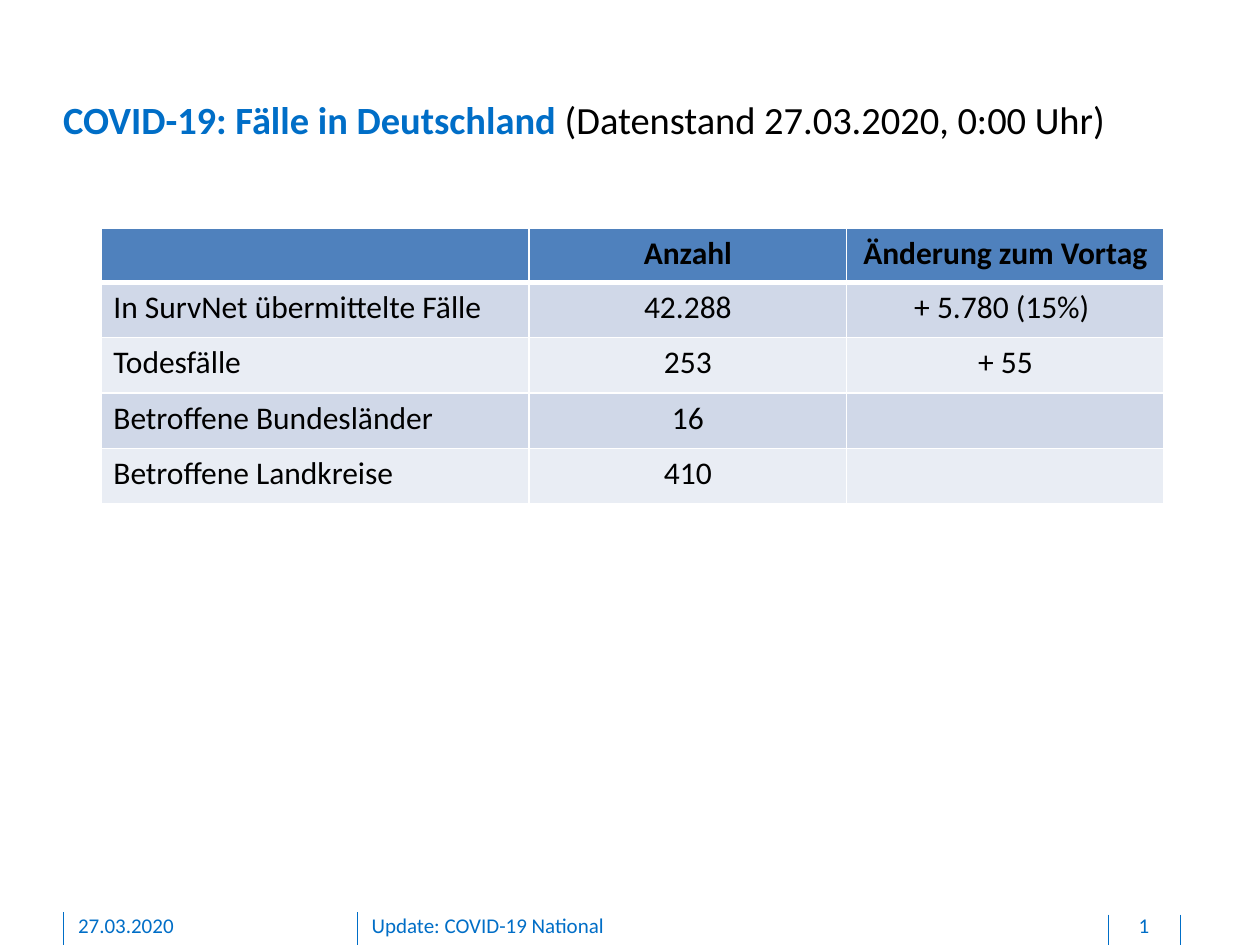
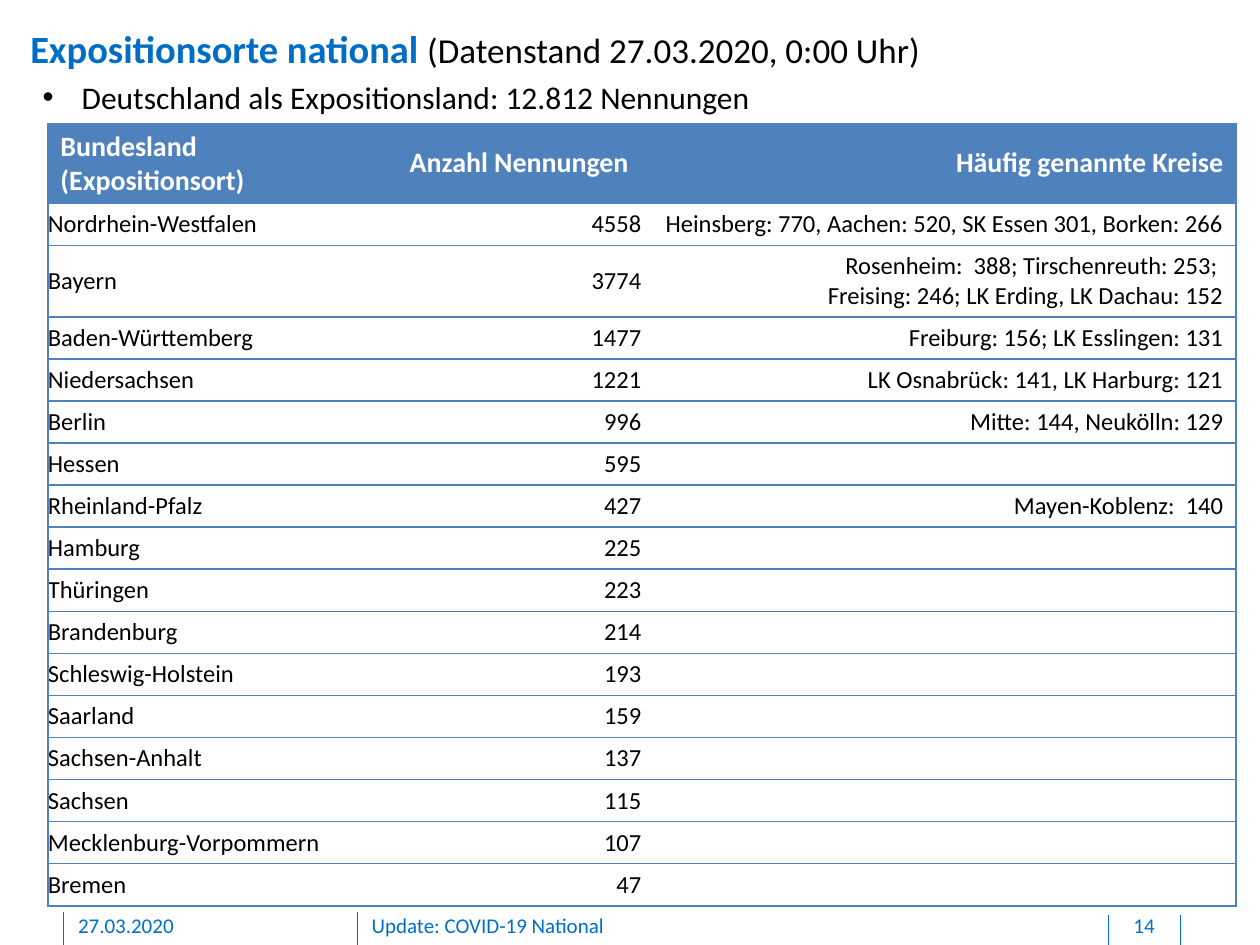
from pptx import Presentation
from pptx.dml.color import RGBColor
from pptx.enum.shapes import MSO_CONNECTOR as Link
from pptx.enum.text import MSO_ANCHOR as Anchor, PP_ALIGN as Align
from pptx.oxml.ns import qn
from pptx.util import Inches, Pt
from lxml.etree import SubElement as sub

FONT = "Calibri"
BLUE, HEAD, BLACK, WHITE = "006EC7", "4F81BD", "000000", "FFFFFF"
BANDS = ["D0D8E8", "E9EDF4"]
PLAIN = "{2D5ABB26-0587-4C30-8999-92F81FD0307C}"
DATE = "(Datenstand 27.03.2020, 0:00 Uhr)"
LEFT, MID, RIGHT = Align.LEFT, Align.CENTER, Align.RIGHT

CASES = [
    ["", "Anzahl", "Änderung zum Vortag"],
    ["In SurvNet übermittelte Fälle", "42.288", "+ 5.780 (15%) "],
    ["Todesfälle", "253", "+ 55"],
    ["Betroffene Bundesländer", "16", ""],
    ["Betroffene Landkreise", "410", ""],
]
PLACES = [
    ["Bundesland (Expositionsort)", "Anzahl Nennungen", "Häufig genannte Kreise"],
    ["Nordrhein-Westfalen", "4558",
     "Heinsberg: 770, Aachen: 520, SK Essen 301, Borken: 266"],
    ["Bayern", "3774",
     "Rosenheim:  388; Tirschenreuth: 253; \nFreising: 246; LK Erding, LK Dachau: 152"],
    ["Baden-Württemberg", "1477", "Freiburg: 156; LK Esslingen: 131"],
    ["Niedersachsen", "1221", "LK Osnabrück: 141, LK Harburg: 121"],
    ["Berlin", "996", "Mitte: 144, Neukölln: 129"],
    ["Hessen", "595", ""],
    ["Rheinland-Pfalz", "427", "Mayen-Koblenz:  140"],
    ["Hamburg", "225", ""],
    ["Thüringen", "223", ""],
    ["Brandenburg", "214", ""],
    ["Schleswig-Holstein", "193", ""],
    ["Saarland", "159", ""],
    ["Sachsen-Anhalt", "137", ""],
    ["Sachsen", "115", ""],
    ["Mecklenburg-Vorpommern", "107", ""],
    ["Bremen", "47", ""],
]


def color(code):
    return RGBColor.from_string(code)


def write(para, text, size, code, bold=False):
    run = para.add_run()
    run.text = text
    font = run.font
    font.name, font.size, font.bold = FONT, Pt(size), bold
    font.color.rgb = color(code)


def inset(item, left=0, top=0, right=0, bottom=0):
    item.margin_left, item.margin_top = Inches(left), Inches(top)
    item.margin_right, item.margin_bottom = Inches(right), Inches(bottom)


def place(shape, box):
    shape.left, shape.top, shape.width, shape.height = map(Inches, box)


def title(slide, box, lead, size):
    head = slide.shapes.title
    place(head, box)
    frame = head.text_frame
    inset(frame)
    frame.word_wrap = True
    frame.vertical_anchor = Anchor.MIDDLE
    para = frame.paragraphs[0]
    para.alignment = LEFT
    write(para, lead, 22, BLUE, True)
    write(para, DATE, size, BLACK)


def label(slide, box, text, align=LEFT):
    frame = slide.shapes.add_textbox(*map(Inches, box)).text_frame
    inset(frame, bottom=0.05)
    frame.word_wrap = True
    para = frame.paragraphs[0]
    para.alignment = align
    write(para, text, 12, BLUE)


def footer(slide, number, top=7.24):
    for x, y in [(0.5, top), (2.84, top), (8.8, top + 0.02), (9.37, top + 0.02)]:
        line = slide.shapes.add_connector(
            Link.STRAIGHT, Inches(x), Inches(y), Inches(x), Inches(7.5))
        line.line.color.rgb = color(BLUE)
        line.line.width = Pt(0.5)
        sub(line._element.spPr, qn("a:effectLst"))
    label(slide, (0.62, top, 2.03, 0.21), "27.03.2020")
    label(slide, (2.95, top, 5.67, 0.21), "Update: COVID-19 National")
    label(slide, (8.81, top, 0.54, 0.21), str(number), MID)


def border(cell, code, sides):
    props = cell._tc.get_or_add_tcPr()
    for side in "LRTB":
        width = sides.get(side, 0)
        line = sub(props, qn("a:ln" + side), w=str(Pt(width)))
        if width:
            fill = sub(line, qn("a:solidFill"))
            sub(fill, qn("a:srgbClr"), val=code)
        else:
            sub(line, qn("a:noFill"))


def paint(cell, code):
    cell.fill.solid()
    cell.fill.fore_color.rgb = color(code)


def fill(cell, text, size, code, bold, align):
    for i, part in enumerate(text.split("\n")):
        frame = cell.text_frame
        para = frame.add_paragraph() if i else frame.paragraphs[0]
        para.alignment = align
        if part:
            write(para, part, size, code, bold)
        else:
            sub(para._p, qn("a:endParaRPr"), sz=str(size * 100))


def grid(slide, box, rows, widths, heights):
    table = slide.shapes.add_table(len(rows), len(widths), *map(Inches, box)).table
    table._tbl.tblPr.find(qn("a:tableStyleId")).text = PLAIN
    for col, width in zip(table.columns, widths):
        col.width = Inches(width)
    for row, height in zip(table.rows, heights):
        row.height = Inches(height)
    for r, row in enumerate(rows):
        for c, text in enumerate(row):
            yield r, c, table.cell(r, c), text


def cases(slide, box):
    heights = [0.43] + [0.44] * 4
    for r, c, cell, text in grid(slide, box, CASES, [3.4, 2.52, 2.52], heights):
        border(cell, WHITE, {"L": 1, "R": 1, "T": 3 if r == 1 else 1,
                             "B": 1 if r else 3})
        paint(cell, BANDS[(r - 1) % 2] if r else HEAD)
        fill(cell, text, 18, BLACK, r == 0, MID if c else LEFT)


def places(slide, box):
    heights = [0.6] + [0.32] * 16
    for r, c, cell, text in grid(slide, box, PLACES, [2.7, 2.01, 4.72], heights):
        border(cell, HEAD, {"T": 1, "B": 1, "L": int(c == 0), "R": int(c == 2)})
        paint(cell, WHITE if r else HEAD)
        cell.vertical_anchor = Anchor.MIDDLE
        if r and c < 2:
            inset(cell)
        fill(cell, text, 14 if r else 16, BLACK if r else WHITE, r == 0,
             RIGHT if c else LEFT)


def bullet(slide, box, text):
    frame = slide.shapes.add_textbox(*map(Inches, box)).text_frame
    frame.word_wrap = False
    para = frame.paragraphs[0]
    props = para._p.get_or_add_pPr()
    props.set("marL", str(Inches(0.31)))
    props.set("indent", str(-Inches(0.31)))
    sub(props, qn("a:buFont"), typeface="Arial")
    sub(props, qn("a:buChar"), char="•")
    write(para, text, 18, BLACK)


def main():
    deck = Presentation()
    deck.slide_width, deck.slide_height = Inches(10), Inches(7.5)
    layout = deck.slide_layouts[5]

    slide = deck.slides.add_slide(layout)
    title(slide, (0.5, 0.76, 8.85, 0.37), "COVID-19: Fälle in Deutschland ", 22)
    footer(slide, 1)
    cases(slide, (0.8, 1.81, 8.44, 2.19))

    slide = deck.slides.add_slide(layout)
    title(slide, (0.24, 0.2, 8.85, 0.37), "Expositionsorte national ", 20)
    footer(slide, 14)
    places(slide, (0.38, 0.98, 9.43, 5.72))
    bullet(slide, (0.24, 0.57, 5.89, 0.4),
           "Deutschland als Expositionsland: 12.812 Nennungen")

    deck.save("out.pptx")


if __name__ == "__main__":
    main()
